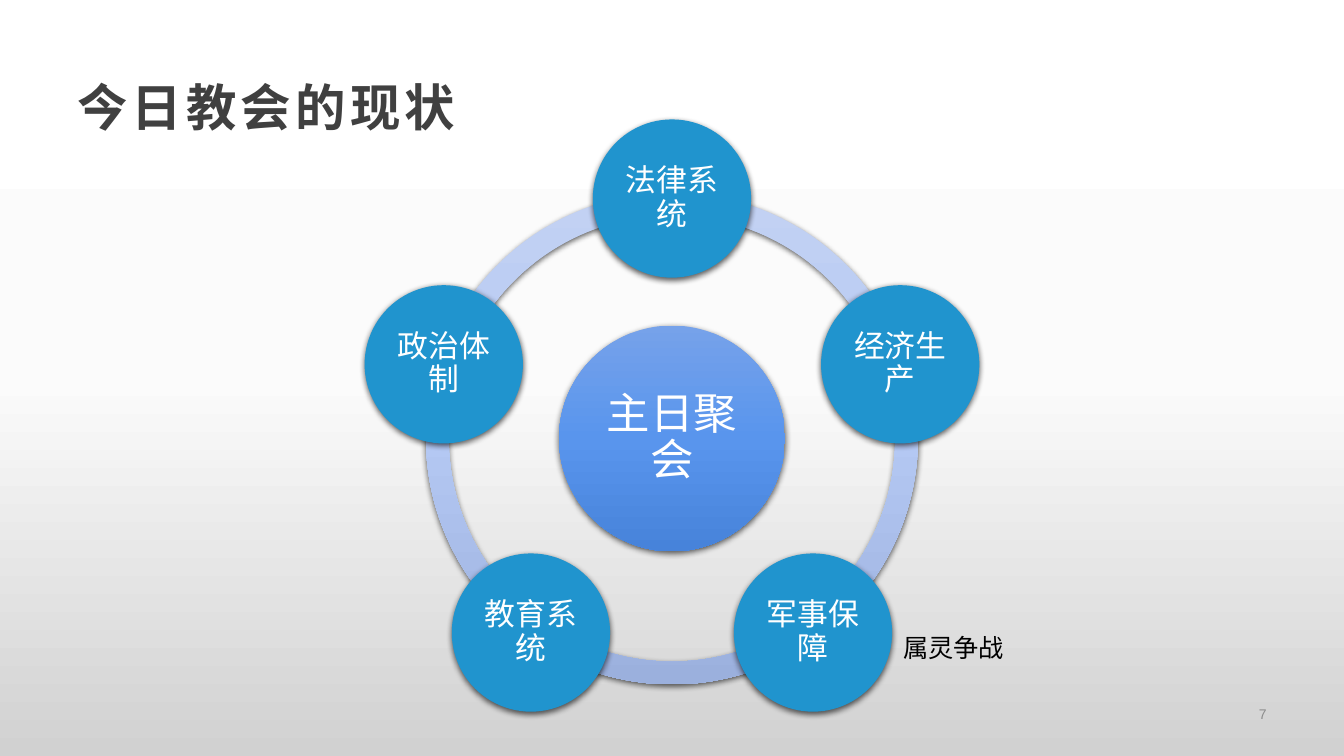
"""Build a slide with a ring of five circles around a centre circle."""
from math import cos, radians, sin

from lxml import etree
from pptx import Presentation
from pptx.dml.color import RGBColor
from pptx.enum.shapes import MSO_SHAPE
from pptx.enum.text import MSO_ANCHOR, PP_ALIGN
from pptx.oxml.ns import qn
from pptx.util import Inches, Pt

TITLE = "今日教会的现状"
CORE = "主日聚会"
NODES = ["法律系统", "经济生产", "军事保障", "教育系统", "政治体制"]
NOTE = "属灵争战"
PAGE = "7"

WIDE, HIGH = 13.33, 7.5
MID_X, MID_Y = WIDE / 2, 4.35
ORBIT, RING, BAND = 2.38, 4.88, 0.0464
CORE_D, NODE_D = 2.24, 1.57
STEP = 360 / len(NODES)

WHITE = RGBColor(0xFF, 0xFF, 0xFF)
BLACK = RGBColor(0, 0, 0)
DARK = RGBColor(0x40, 0x40, 0x40)
GREY = RGBColor(0x8C, 0x8C, 0x8C)
BLUE = RGBColor(0x20, 0x94, 0xCE)
BACK = [WHITE, RGBColor(0xFB, 0xFB, 0xFB), RGBColor(0xD1, 0xD1, 0xD1)]
PALE = [RGBColor(0xC2, 0xD1, 0xF3), RGBColor(0xB4, 0xC8, 0xF3), RGBColor(0x9B, 0xB0, 0xDD)]
DEEP = [RGBColor(0x76, 0xA2, 0xEA), RGBColor(0x59, 0x95, 0xED), RGBColor(0x47, 0x83, 0xDA)]

ARC, OVAL = MSO_SHAPE.BLOCK_ARC, MSO_SHAPE.OVAL
MIDDLE, TOP = MSO_ANCHOR.MIDDLE, MSO_ANCHOR.TOP
LEFT, CENTER, RIGHT = PP_ALIGN.LEFT, PP_ALIGN.CENTER, PP_ALIGN.RIGHT


def add(parent, tag, **attrs):
    return etree.SubElement(parent, qn(tag), {k: str(v) for k, v in attrs.items()})


def blend(fill, root, colors):
    fill.gradient()
    fill.gradient_angle = 270
    stops = root.find(".//" + qn("a:gsLst"))
    for old in list(stops):
        stops.remove(old)
    for i, color in enumerate(colors):
        stop = add(stops, "a:gs", pos=i * 50000)
        add(stop, "a:srgbClr", val=color)


def shade(effects, blur, dist, angle, alpha):
    drop = add(effects, "a:outerShdw", blurRad=Pt(blur), dist=Pt(dist),
               dir=angle * 60000, algn="ctr", rotWithShape=0)
    add(add(drop, "a:srgbClr", val=BLACK), "a:alpha", val=alpha * 1000)


def write(frame, text, size, color, align, anchor):
    frame.word_wrap = True
    frame.vertical_anchor = anchor
    para = frame.paragraphs[0]
    para.text = text
    para.alignment = align
    font = para.font
    font.size, font.name = Pt(size), "Arial"
    font.color.rgb = color
    return para


def draw(slide, kind, x, y, size, colors):
    shape = slide.shapes.add_shape(kind, Inches(x - size / 2), Inches(y - size / 2),
                                   Inches(size), Inches(size))
    if isinstance(colors, list):
        blend(shape.fill, shape.element, colors)
    else:
        shape.fill.solid()
        shape.fill.fore_color.rgb = colors
    shape.line.fill.background()
    shape.shadow.inherit = False
    shade(shape.element.spPr.find(qn("a:effectLst")), 4.5, 1.5, 90, 63)
    return shape


def disc(slide, x, y, size, colors, text, points, inset):
    frame = draw(slide, OVAL, x, y, size, colors).text_frame
    frame.margin_left = frame.margin_right = Inches(inset)
    frame.margin_top = frame.margin_bottom = Inches(inset)
    write(frame, text, points, WHITE, CENTER, MIDDLE).line_spacing = 0.9


def label(slide, box, *style):
    shape = slide.shapes.add_textbox(*map(Inches, box))
    write(shape.text_frame, *style)


def head(slide):
    title = slide.shapes.title
    title.left, title.top, title.width, title.height = map(
        Inches, (WIDE / 20, 0.67, WIDE * 0.9, 0.77))
    frame = title.text_frame
    para = write(frame, TITLE, 36, DARK, LEFT, MIDDLE)
    font = para.runs[0].font
    font.size, font.bold = Pt(36), True
    font.color.rgb = DARK
    props = para.runs[0]._r.get_or_add_rPr()
    props.set("spc", "300")
    shade(add(props, "a:effectLst"), 3, 3, 45, 43)
    for tag in ("a:latin", "a:ea"):
        add(props, tag, typeface="Noto Sans CJK SC")


def main():
    deck = Presentation()
    deck.slide_width, deck.slide_height = Inches(WIDE), Inches(HIGH)
    slide = deck.slides.add_slide(deck.slide_layouts[5])
    blend(slide.background.fill, slide.element, BACK)
    head(slide)
    turns = [270 + STEP * i for i in range(len(NODES))]
    for turn in reversed(turns):
        arc = draw(slide, ARC, MID_X, MID_Y, RING, PALE)
        for i, angle in enumerate((turn, turn + STEP)):
            arc.adjustments[i] = angle % 360 * 0.6
        arc.adjustments[2] = BAND
    disc(slide, MID_X, MID_Y, CORE_D, DEEP, CORE, 31, 0.04)
    for turn, text in zip(turns, NODES):
        x = MID_X + ORBIT * cos(radians(turn))
        y = MID_Y + ORBIT * sin(radians(turn))
        disc(slide, x, y, NODE_D, BLUE, text, 22, 0.03)
    label(slide, (8.86, 6.22, 2, 0.4), NOTE, 18, BLACK, LEFT, TOP)
    label(slide, (9.71, 6.91, 2.95, 0.35), PAGE, 10, GREY, RIGHT, MIDDLE)
    deck.save("out.pptx")


if __name__ == "__main__":
    main()
